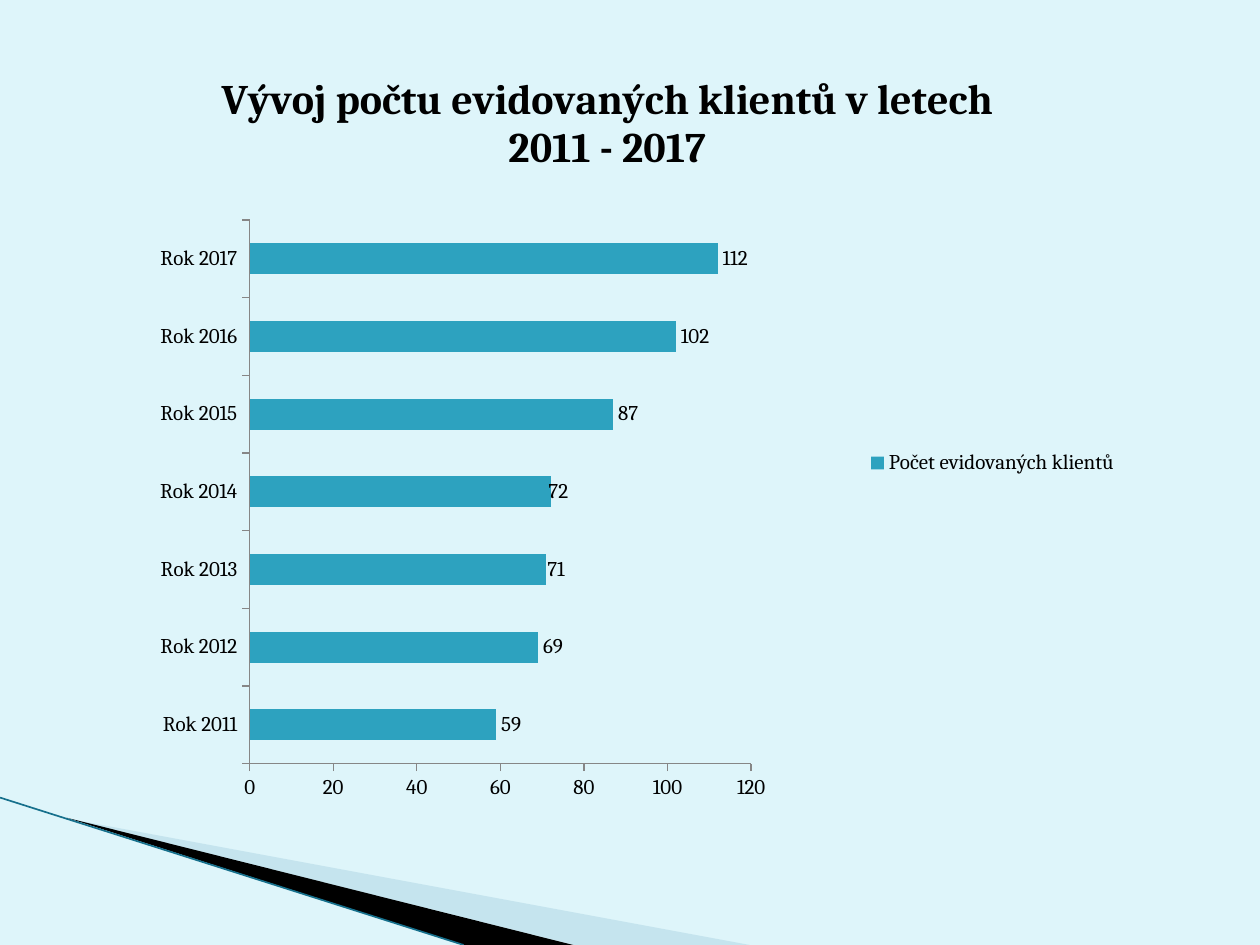
"""Build a slide with a bar chart of registered clients by year."""
from lxml import etree
from pptx import Presentation
from pptx.chart.data import CategoryChartData
from pptx.dml.color import RGBColor
from pptx.enum.chart import XL_CHART_TYPE, XL_LABEL_POSITION, XL_LEGEND_POSITION, XL_TICK_MARK
from pptx.enum.shapes import MSO_CONNECTOR
from pptx.oxml import parse_xml
from pptx.oxml.ns import nsdecls, qn
from pptx.util import Inches, Pt

BAR_CLUSTERED = XL_CHART_TYPE.BAR_CLUSTERED
OUTSIDE_END = XL_LABEL_POSITION.OUTSIDE_END
LEGEND_RIGHT = XL_LEGEND_POSITION.RIGHT
TICK_OUTSIDE = XL_TICK_MARK.OUTSIDE
TICK_NONE = XL_TICK_MARK.NONE
STRAIGHT = MSO_CONNECTOR.STRAIGHT

BACKGROUND = RGBColor(0xDE, 0xF5, 0xFA)
PALE_BLUE = RGBColor(0xA0, 0xCB, 0xDC)
BLACK = RGBColor(0x00, 0x00, 0x00)
LINE_TEAL = RGBColor(0x16, 0x70, 0x8C)
BAR_TEAL = RGBColor(0x2D, 0xA2, 0xBF)
AXIS_GRAY = RGBColor(0x86, 0x86, 0x86)
FONT = "Cambria"


def manual_layout(**values):
    entries = "".join(f'<c:{name} val="{value}"/>' for name, value in values.items())
    return parse_xml(
        f'<c:layout {nsdecls("c")}><c:manualLayout>{entries}</c:manualLayout></c:layout>'
    )


def set_font(font, size, bold=False):
    font.name = FONT
    font.size = Pt(size)
    font.bold = bold
    font.color.rgb = BLACK


presentation = Presentation()
presentation.slide_width = Inches(10)
presentation.slide_height = Inches(7.5)
slide = presentation.slides.add_slide(presentation.slide_layouts[6])
slide.background.fill.solid()
slide.background.fill.fore_color.rgb = BACKGROUND

wedges = [
    ([(0.55, 6.5), (5.95, 7.5), (4.56, 7.5)], PALE_BLUE, 40),
    ([(0.53, 6.49), (4.55, 7.5), (3.68, 7.5)], BLACK, 100),
]
for points, color, opacity in wedges:
    corners = [(Inches(x), Inches(y)) for x, y in points]
    builder = slide.shapes.build_freeform(*corners[0], scale=1.0)
    builder.add_line_segments(corners[1:], close=True)
    wedge = builder.convert_to_shape()
    wedge.shadow.inherit = False
    wedge.fill.solid()
    wedge.fill.fore_color.rgb = color
    wedge.line.fill.background()
    if opacity < 100:
        color_element = wedge.fill._xPr.find(qn("a:solidFill"))[0]
        etree.SubElement(color_element, qn("a:alpha")).set("val", str(opacity * 1000))

edge = slide.shapes.add_connector(
    STRAIGHT, Inches(0), Inches(6.33), Inches(3.68), Inches(7.5)
)
edge.line.color.rgb = LINE_TEAL
edge.line.width = Pt(0.95)
etree.SubElement(edge._element.spPr, qn("a:effectLst"))

chart_data = CategoryChartData()
chart_data.categories = [f"Rok {year}" for year in range(2011, 2018)]
chart_data.add_series("Počet evidovaných klientů", [59, 69, 71, 72, 87, 102, 112])
chart = slide.shapes.add_chart(
    BAR_CLUSTERED, Inches(0.89), Inches(0.44), Inches(8.09), Inches(6.47), chart_data
).chart
set_font(chart.font, 12)

chart.has_title = True
title_run = chart.chart_title.text_frame.paragraphs[0].add_run()
title_run.text = "Vývoj počtu evidovaných klientů v letech 2011 - 2017"
set_font(title_run.font, 24, bold=True)
title = chart.chart_title._element
for layout in title.findall(qn("c:layout")):
    title.remove(layout)
title.find(qn("c:tx")).addnext(
    manual_layout(xMode="edge", yMode="edge", x=0.1, y=0.01)
)

chart.has_legend = True
chart.legend.position = LEGEND_RIGHT
chart.legend.include_in_layout = False
set_font(chart.legend.font, 12)

for axis in (chart.category_axis, chart.value_axis):
    axis.has_major_gridlines = False
    axis.major_tick_mark = TICK_OUTSIDE
    axis.minor_tick_mark = TICK_NONE
    axis.format.line.color.rgb = AXIS_GRAY
    axis.format.line.width = Pt(0.75)
    set_font(axis.tick_labels.font, 12)
chart.value_axis.minimum_scale = 0
chart.value_axis.maximum_scale = 120
chart.value_axis.major_unit = 20

plot = chart.plots[0]
plot.gap_width = 150
plot.vary_by_categories = False
series = plot.series[0]
series.format.fill.solid()
series.format.fill.fore_color.rgb = BAR_TEAL
labels = series.data_labels
labels.show_value = True
labels.position = OUTSIDE_END
set_font(labels.font, 12)
for index, shift in ((2, -0.004), (3, -0.007)):
    label = series.points[index].data_label
    label.position = OUTSIDE_END
    set_font(label.font, 12)
    label_element = labels._element.findall(qn("c:dLbl"))[-1]
    label_element.find(qn("c:idx")).addnext(manual_layout(x=shift, y=0))

plot_area = chart._chartSpace.chart.plotArea
for layout in plot_area.findall(qn("c:layout")):
    plot_area.remove(layout)
plot_area.insert(0, manual_layout(
    layoutTarget="inner", xMode="edge", yMode="edge", x=0.135, y=0.202, w=0.492, h=0.667
))

presentation.save("out.pptx")
